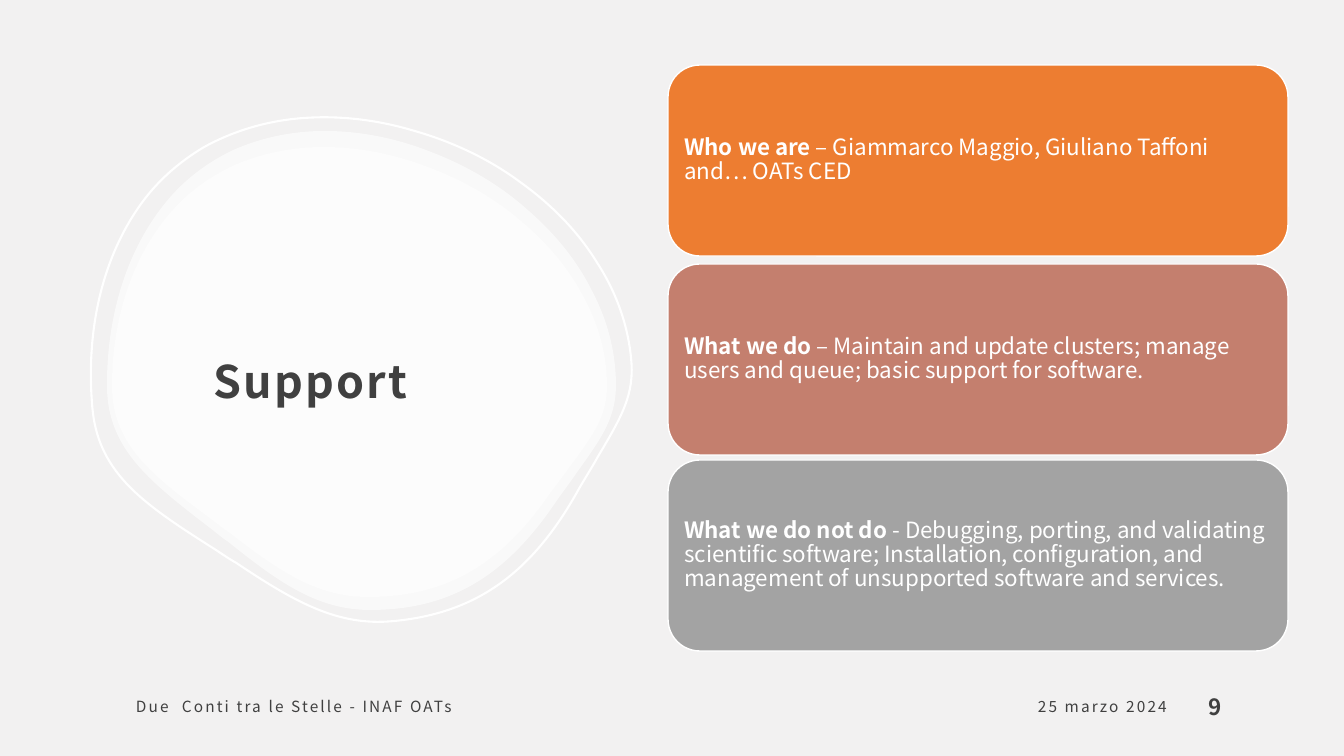
from lxml import etree
from pptx import Presentation, util as u
from pptx.dml.color import RGBColor
from pptx.enum import shapes, text
from pptx.oxml import ns

PX = 12192000 / 1344
FONT = "Noto Sans CJK JP"
COLORS = {
    "back": "F2F1F1", "white": "FFFFFF", "dark": "404040",
    "orange": "ED7D31", "rose": "C47F6E", "gray": "A3A3A3",
}


def px(n):
    return u.Emu(round(n * PX))


def write(sp, runs, size, color="dark", spc=0, align="LEFT", anchor="MIDDLE",
          insets=(12, 12, 12, 10), line=1.0, after=0):
    """Fill a shape with one paragraph of (text, bold) runs."""
    tf = sp.text_frame
    tf.word_wrap = True
    tf.auto_size = text.MSO_AUTO_SIZE.NONE
    tf.vertical_anchor = text.MSO_ANCHOR[anchor]
    tf.margin_left, tf.margin_top, tf.margin_right, tf.margin_bottom = map(px, insets)
    p = tf.paragraphs[0]
    p.alignment = text.PP_ALIGN[align]
    p.line_spacing = line
    p.space_before = u.Pt(0)
    p.space_after = u.Pt(after)
    for content, bold in runs:
        r = p.add_run()
        r.text = content
        r.font.name = FONT
        r.font.size = u.Pt(size)
        r.font.bold = bold
        r.font.color.rgb = RGBColor.from_string(COLORS[color])
        if spc:
            r._r.get_or_add_rPr().set("spc", str(spc))


prs = Presentation()
prs.slide_width, prs.slide_height = px(1344), px(756)
s = prs.slides.add_slide(prs.slide_layouts[5])
s.background.fill.solid()
s.background.fill.fore_color.rgb = RGBColor.from_string(COLORS["back"])
white = RGBColor.from_string(COLORS["white"])

# Blob outline: cubic curves (two controls and an end) on a 505 x 475 grid
START = (216, 0)
CURVES = [
    ((183, 0), (152, 7), (125, 19)),
    ((100, 31), (77, 48), (59, 70)),
    ((21, 116), (0, 180), (0, 252)),
    ((0, 280), (8, 303), (26, 326)),
    ((45, 350), (74, 372), (104, 395)),
    ((109, 399), (115, 404), (121, 408)),
    ((172, 449), (210, 475), (261, 475)),
    ((339, 475), (395, 443), (446, 367)),
    ((453, 357), (460, 348), (466, 339)),
    ((492, 303), (505, 284), (505, 252)),
    ((505, 220), (497, 188), (481, 158)),
    ((466, 128), (444, 101), (416, 77)),
    ((389, 53), (356, 34), (322, 21)),
    ((287, 7), (251, 0), START),
]

# Two translucent blobs and a tilted ring share the outline
for left, top, width, height, tilt, filled in [
    (107, 131, 509, 479, 0, True),
    (112, 147, 495, 450, 0, True),
    (90, 114, 541, 509, -5, False),
]:
    fb = s.shapes.build_freeform(*START, scale=(width * PX / 505, height * PX / 475))
    fb.add_line_segments([end for c1, c2, end in CURVES], close=True)
    sp = fb.convert_to_shape(px(left), px(top))
    sp.rotation = tilt
    sp.shadow.inherit = False
    # Bend each straight segment into its cubic curve
    for segment, curve in zip(list(sp.element.iter(ns.qn("a:lnTo"))), CURVES):
        bend = etree.Element(ns.qn("a:cubicBezTo"))
        for x, y in curve:
            etree.SubElement(bend, ns.qn("a:pt"), x=str(x), y=str(y))
        segment.getparent().replace(segment, bend)
    if filled:
        sp.fill.solid()
        sp.fill.fore_color.rgb = white
        clr = sp.element.spPr.find(".//" + ns.qn("a:srgbClr"))
        etree.SubElement(clr, ns.qn("a:alpha"), val="60000")
        sp.line.fill.background()
    else:
        sp.fill.background()
        sp.line.color.rgb = white
        sp.line.width = u.Pt(1.5)

# Title, brought in front of the blobs
title = s.shapes.title
title.left, title.top, title.width, title.height = map(px, (202, 210, 365, 324))
title.element.getparent().append(title.element)
write(title, [("Support", True)], 32, spc=150, line=1.3)

# Footer, date and page number
for content, left, width, size, fmt in [
    ("Due  Conti tra le Stelle - INAF OATs", 124, 625, 11, dict(spc=150)),
    ("25 marzo 2024", 866, 313, 11, dict(spc=150, align="RIGHT")),
    ("9", 1197, 131, 16, dict(anchor="BOTTOM")),
]:
    tb = s.shapes.add_textbox(px(left), px(680), px(width), px(50))
    write(tb, [(content, content == "9")], size, after=6, **fmt)

# Cards
for top, color, heading, body in [
    (65, "orange", "Who we are ", "– Giammarco Maggio, Giuliano Taffoni and… OATs CED"),
    (264, "rose", "What we do ",
     "– Maintain and update clusters; manage users and queue; basic support for software."),
    (460, "gray", "What we do not do ",
     "- Debugging, porting, and validating scientific software; Installation, "
     "configuration, and management of unsupported software and services."),
]:
    card = s.shapes.add_shape(shapes.MSO_SHAPE.ROUNDED_RECTANGLE,
                              px(668), px(top), px(620), px(191))
    card.shadow.inherit = False
    card.fill.solid()
    card.fill.fore_color.rgb = RGBColor.from_string(COLORS[color])
    card.line.color.rgb = white
    card.line.width = u.Pt(1)
    write(card, [(heading, True), (body, False)], 16, color="white",
          insets=(7, 7, 7, 7), line=0.9)

prs.save("out.pptx")
